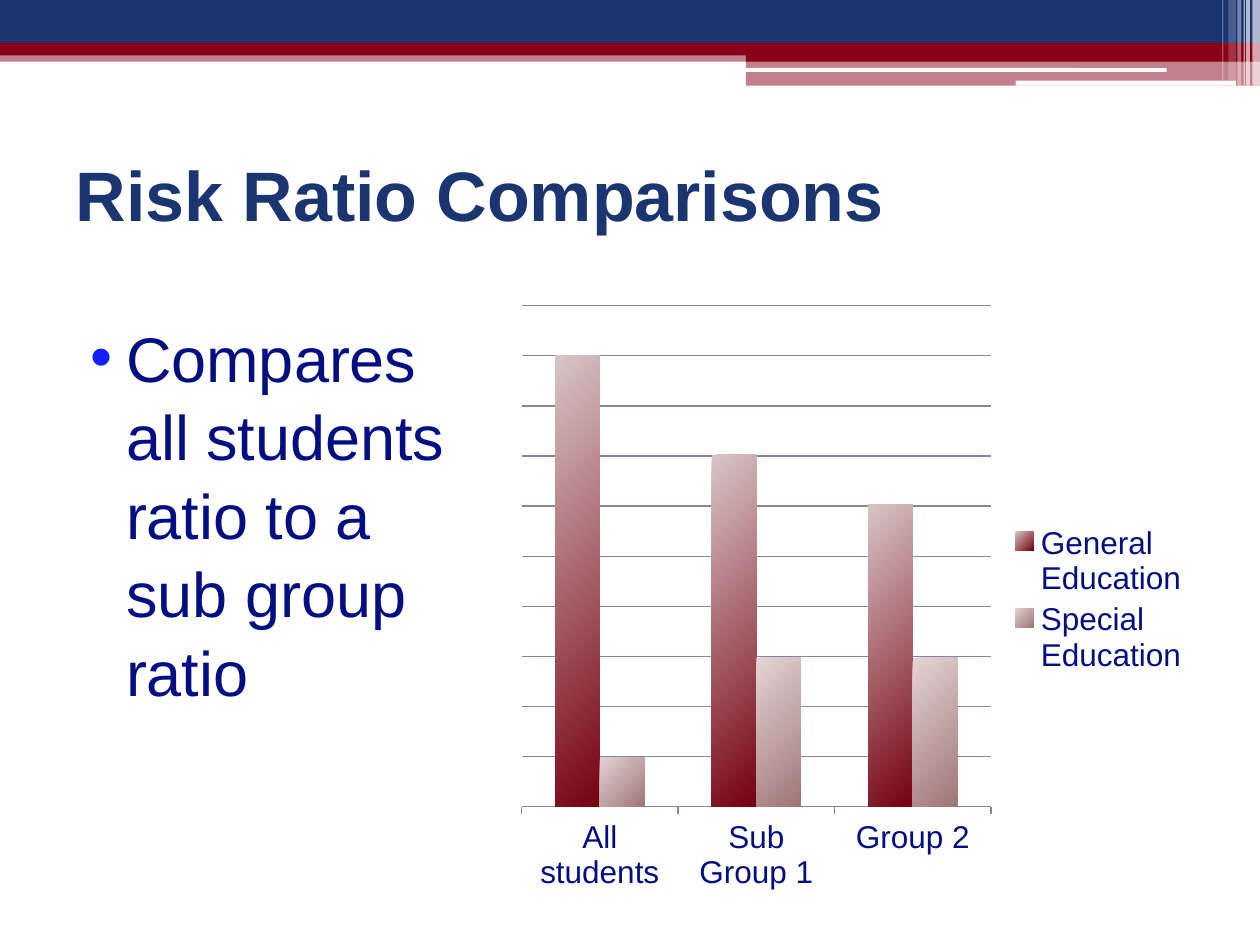
import pptx
import pptx.util
import pptx.dml.color
import pptx.chart.data
import pptx.enum.chart
import pptx.enum.shapes
import pptx.enum.text
import pptx.oxml
import pptx.oxml.ns

RGB = pptx.dml.color.RGBColor
NAVY = RGB(0x1B, 0x35, 0x71)
RED = RGB(0x89, 0x01, 0x16)
WHITE = RGB(0xFF, 0xFF, 0xFF)
INK = RGB(0x03, 0x0E, 0x83)
DOT = RGB(0x12, 0x1F, 0xFF)
RULE = RGB(0x84, 0x84, 0xA6)
FADES = [
    (RGB(0xD8, 0xC6, 0xC6), RGB(0x76, 0x00, 0x10)),
    (RGB(0xE4, 0xD4, 0xD4), RGB(0xA0, 0x76, 0x76)),
]
FONT = "Arial"
COLS, ROWS = 100, 75
CELL = pptx.util.Inches(10) // COLS
KIND = pptx.enum.shapes.MSO_SHAPE
QN = pptx.oxml.ns.qn


def grid(*cells):
    return [round(n * CELL) for n in cells]


def node(tag, **attrs):
    item = pptx.oxml.parse_xml(f"<{tag} {pptx.oxml.ns.nsdecls(tag.split(':')[0])}/>")
    for key, val in attrs.items():
        item.set(key, str(val))
    return item


def place(shape, box):
    shape.left, shape.top, shape.width, shape.height = grid(*box)


def style(font, size, color, bold=False):
    font.name, font.size, font.bold = FONT, pptx.util.Pt(size), bold
    font.color.rgb = color


def bar(slide, box, color, alpha=100, kind=KIND.RECTANGLE):
    shape = slide.shapes.add_shape(kind, *grid(*box))
    shape.shadow.inherit = False
    shape.line.fill.background()
    shape.fill.solid()
    shape.fill.fore_color.rgb = color
    if alpha < 100:
        tint = shape.fill._xPr.find(".//" + QN("a:srgbClr"))
        tint.append(node("a:alpha", val=alpha * 1000))


def banner(slide, box):
    left, top, wide, high = box
    step = left + 0.592 * wide
    rest = left + wide - step
    bar(slide, (left, top + 4, wide, 0.9), RED, 50)
    bar(slide, (left, top, wide, 3.4), NAVY)
    bar(slide, (left, top + 3.4, wide, 1), RED)
    bar(slide, (step, top + 3.9, rest, 1), RED)
    bar(slide, (step, top + 4.8, rest, 2), RED, 50)
    for x, y, w, h in [(59.1, 5.4, 33.5, 0.3), (80.6, 6.4, 17.5, 0.4)]:
        bar(slide, (left + x, top + y, w, h), WHITE, kind=KIND.ROUNDED_RECTANGLE)
    strips = [(0.6, 0.6, 6.8, 65), (1.1, 0.3, 6.8, 65), (1.3, 0.1, 6.8, 60),
              (1.8, 0.3, 6.8, 40), (2.5, 0.6, 6.4, 20), (3, 0.1, 6.4, 30)]
    for back, w, h, alpha in strips:
        bar(slide, (left + wide - back, top, w, h), WHITE, alpha)


def title(slide, box):
    shape = slide.shapes.title
    place(shape, box)
    frame = shape.text_frame
    frame.auto_size = pptx.enum.text.MSO_AUTO_SIZE.NONE
    frame.vertical_anchor = pptx.enum.text.MSO_ANCHOR.MIDDLE
    para = frame.paragraphs[0]
    para.alignment = pptx.enum.text.PP_ALIGN.LEFT
    run = para.add_run()
    run.text = "Risk Ratio Comparisons"
    style(run.font, 40, NAVY, True)


def points(slide, box):
    shape = slide.placeholders[1]
    place(shape, box)
    frame = shape.text_frame
    frame.auto_size = pptx.enum.text.MSO_AUTO_SIZE.NONE
    para = frame.paragraphs[0]
    para.space_before = pptx.util.Pt(3)
    para.line_spacing = 1.04
    props = para._p.get_or_add_pPr()
    props.set("marL", str(grid(4)[0]))
    props.set("indent", str(grid(-2.8)[0]))
    tint = node("a:buClr")
    tint.append(node("a:srgbClr", val=DOT))
    props.append(tint)
    props.append(node("a:buFont", typeface=FONT))
    props.append(node("a:buChar", char="•"))
    run = para.add_run()
    run.text = "Compares all students ratio to a sub group ratio"
    style(run.font, 36, INK)


def layout(part, index, inner, **shares):
    old = part.find(QN("c:layout"))
    if old is not None:
        part.remove(old)
    outer, man = node("c:layout"), node("c:manualLayout")
    if inner:
        man.append(node("c:layoutTarget", val="inner"))
    man.append(node("c:xMode", val="edge"))
    man.append(node("c:yMode", val="edge"))
    for key, val in shares.items():
        man.append(node("c:" + key, val=val))
    outer.append(man)
    part.insert(index, outer)


def graph(slide, box):
    data = pptx.chart.data.CategoryChartData()
    data.categories = ["All students", "Sub Group 1", "Group 2"]
    data.add_series("General Education", [100, 78, 67])
    data.add_series("Special Education", [11, 33, 33])
    kind = pptx.enum.chart.XL_CHART_TYPE.COLUMN_CLUSTERED
    chart = slide.shapes.add_chart(kind, *grid(*box), data).chart
    style(chart.font, 18, INK)
    chart.has_title = False
    chart.has_legend = True
    chart.legend.position = pptx.enum.chart.XL_LEGEND_POSITION.RIGHT
    chart.legend.include_in_layout = False
    area = chart._chartSpace.chart.plotArea
    layout(area, 0, True, x=0.02, y=0.02, w=0.68, h=0.82)
    layout(chart.legend._element, 1, False, x=0.72, y=0.37, w=0.27, h=0.26)
    axis = chart.value_axis
    axis.minimum_scale, axis.maximum_scale, axis.major_unit = 0, 111, 11.1
    axis.has_major_gridlines = True
    axis.visible = False
    base = chart.category_axis
    base.major_tick_mark = pptx.enum.chart.XL_TICK_MARK.OUTSIDE
    for line in (axis.major_gridlines.format.line, base.format.line):
        line.color.rgb = RULE
        line.width = pptx.util.Pt(0.75)
    plot = chart.plots[0]
    plot.gap_width, plot.overlap, plot.vary_by_categories = 150, 0, False
    for row, fade in zip(plot.series, FADES):
        fill = row.format.fill
        fill.gradient()
        fill.gradient_angle = 315
        for stop, color in zip(fill.gradient_stops, fade):
            stop.color.rgb = color
        row.format.line.fill.background()


def main():
    deck = pptx.Presentation()
    deck.slide_width, deck.slide_height = grid(COLS, ROWS)
    slide = deck.slides.add_slide(deck.slide_layouts[1])
    banner(slide, (0, 0, COLS, 6.8))
    title(slide, (5, 9.5, 90, 11.7))
    points(slide, (5, 24.6, 33, 49.5))
    graph(slide, (40.3, 23.3, 54.8, 48.5))
    deck.save("out.pptx")


if __name__ == "__main__":
    main()
